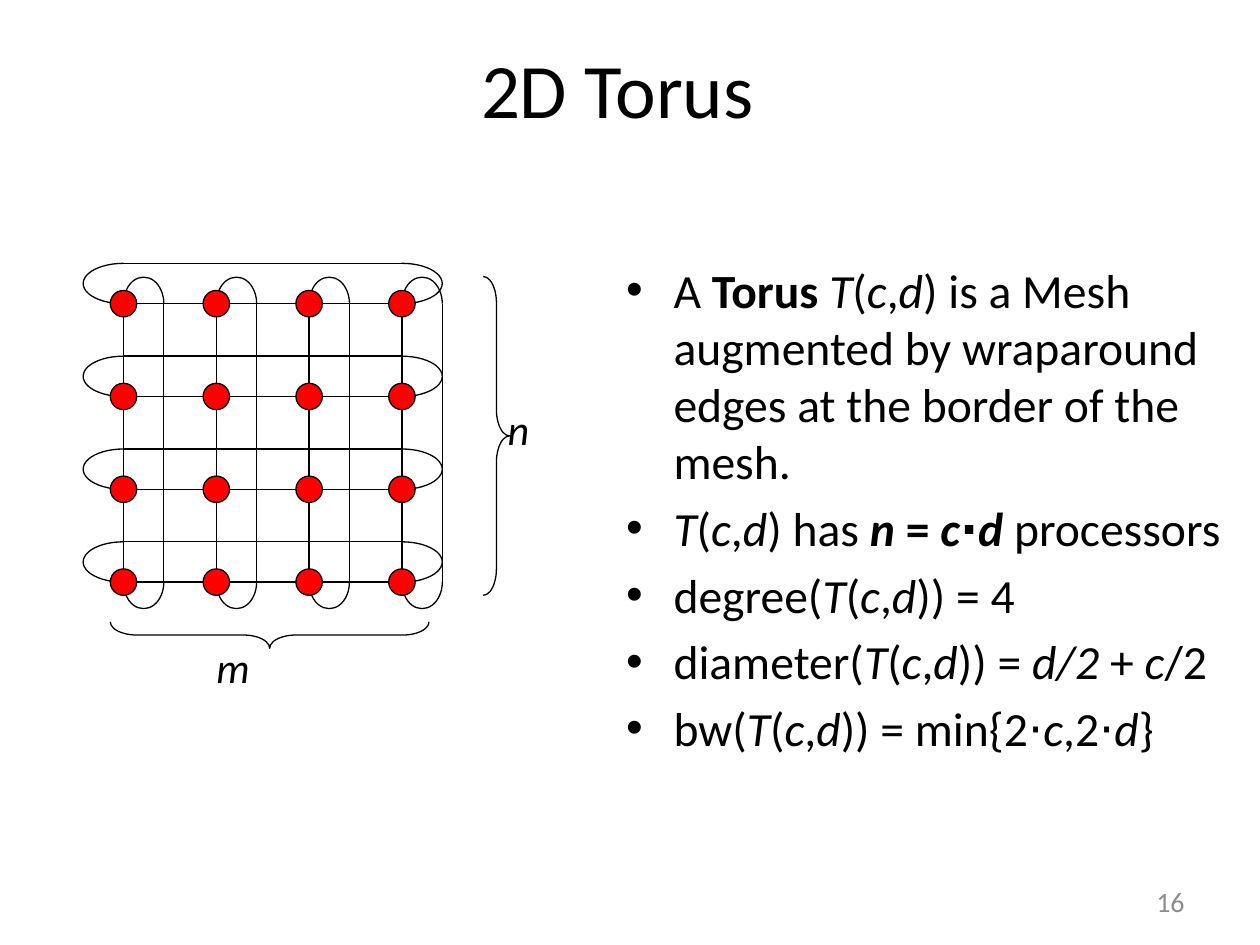
from dataclasses import dataclass

from lxml import etree
from pptx import Presentation
from pptx.dml.color import RGBColor
from pptx.enum.shapes import MSO_CONNECTOR, MSO_SHAPE
from pptx.enum.text import MSO_ANCHOR, MSO_AUTO_SIZE, PP_ALIGN
from pptx.oxml.ns import qn
from pptx.util import Inches, Pt

STRAIGHT = MSO_CONNECTOR.STRAIGHT
BRACKET, BRACE, OVAL = MSO_SHAPE.LEFT_BRACKET, MSO_SHAPE.RIGHT_BRACE, MSO_SHAPE.OVAL
MIDDLE, NO_FIT = MSO_ANCHOR.MIDDLE, MSO_AUTO_SIZE.NONE
LEFT, CENTER, RIGHT = PP_ALIGN.LEFT, PP_ALIGN.CENTER, PP_ALIGN.RIGHT


@dataclass(frozen=True)
class Theme:
    font: str = "Calibri"
    ink: RGBColor = RGBColor(0, 0, 0)
    node: RGBColor = RGBColor(0xFF, 0, 0)
    muted: RGBColor = RGBColor(0x8C, 0x8C, 0x8C)
    title: float = 44
    body: float = 27.2
    label: float = 24
    number: float = 16
    line: float = 0.75


THEME = Theme()

# Content: runs are (text, style), style "b" bold, "i" italic
TITLE = "2D Torus"
NUMBER = "16"
TORUS = [("T", "i"), ("(", ""), ("c", "i"), (",", ""), ("d", "i")]
BULLETS = [
    [("A ", ""), ("Torus ", "b"), *TORUS,
     (") is a Mesh augmented by wraparound edges at the border of the mesh.", "")],
    [*TORUS, (") has ", ""), ("n", "bi"), (" = ", "b"), ("c", "bi"), ("⋅", "b"),
     ("d", "bi"), (" processors", "")],
    [("degree(", ""), *TORUS, (")) = 4", "")],
    [("diameter(", ""), *TORUS, (")) = ", ""), ("d/2", "i"), (" + ", ""),
     ("c", "i"), ("/2", "")],
    [("bw(", ""), *TORUS, (")) = min{2⋅", ""), ("c", "i"), (",2⋅", ""),
     ("d", "i"), ("}", "")],
]
LABELS = [("n", 3.93, 3.15), ("m", 1.62, 5.04)]

# Torus grid, in inches
COUNT, SPAN = 4, 2.21
X0, Y0 = 0.98, 2.41
NODE, LOOP = 0.21, 0.32
XS = [X0 + i * SPAN / (COUNT - 1) for i in range(COUNT)]
YS = [Y0 + i * SPAN / (COUNT - 1) for i in range(COUNT)]
X1, Y1 = XS[-1], YS[-1]
BRACE_LENGTH = 2.53


def place(sp, left, top, width, height):
    sp.left, sp.top = Inches(left), Inches(top)
    sp.width, sp.height = Inches(width), Inches(height)


def style_run(r, size, color=THEME.ink, style=""):
    r.font.name, r.font.size = THEME.font, Pt(size)
    r.font.color.rgb = color
    r.font.bold, r.font.italic = "b" in style, "i" in style


def add_text(shapes, text, box, size, color=THEME.ink, style="", align=LEFT):
    sp = shapes.add_textbox(*map(Inches, box))
    tf = sp.text_frame
    tf.word_wrap = True
    tf.text = text
    p = tf.paragraphs[0]
    p.alignment = align
    style_run(p.runs[0], size, color, style)
    return tf


def add_line(shapes, x1, y1, x2, y2):
    line = shapes.add_connector(STRAIGHT, *map(Inches, (x1, y1, x2, y2)))
    line.line.color.rgb, line.line.width = THEME.ink, Pt(THEME.line)
    etree.SubElement(line._element.spPr, qn("a:effectLst"))


def add_outline(shapes, kind, cx, cy, width, height, rotation=0, adjust=(), fill=None):
    """Add a preset shape centred on (cx, cy)."""
    box = (cx - width / 2, cy - height / 2, width, height)
    sp = shapes.add_shape(kind, *map(Inches, box))
    sp.shadow.inherit = False
    sp.rotation = rotation
    for i, value in enumerate(adjust):
        sp.adjustments[i] = value
    if fill is None:
        sp.fill.background()
    else:
        sp.fill.solid()
        sp.fill.fore_color.rgb = fill
    sp.line.color.rgb, sp.line.width = THEME.ink, Pt(THEME.line)


def draw_torus(shapes):
    # Rows with their wraparound edges
    for y in YS:
        add_line(shapes, X0, y, X1, y)
        add_line(shapes, X0, y - LOOP, X1, y - LOOP)
        for cx, turn in ((X0 - LOOP / 2, 0), (X1 + LOOP / 2, 180)):
            add_outline(shapes, BRACKET, cx, y - LOOP / 2, LOOP, LOOP, turn, (0.5,))
    # Columns with their wraparound edges
    for x in XS:
        add_line(shapes, x, Y0, x, Y1)
        add_line(shapes, x + LOOP, Y0, x + LOOP, Y1)
        for cy, turn in ((Y0 - NODE / 2, 90), (Y1 + NODE / 2, 270)):
            add_outline(shapes, BRACKET, x + LOOP / 2, cy, NODE, LOOP, turn, (0.75,))
    # Processors
    for y in YS:
        for x in XS:
            add_outline(shapes, OVAL, x, y, NODE, NODE, fill=THEME.node)
    # Side braces and their labels
    for cx, cy, turn in ((3.94, 3.46, 0), (2.14, 5.04, 90)):
        add_outline(shapes, BRACE, cx, cy, NODE, BRACE_LENGTH, turn, (1, 0.5))
    for text, left, top in LABELS:
        add_text(shapes, text, (left, top, 0.83, 0.63), THEME.label, style="i")


def main():
    prs = Presentation()
    prs.slide_width, prs.slide_height = Inches(10), Inches(7.5)
    s = prs.slides.add_slide(prs.slide_layouts[1])

    # Title
    title = s.shapes.title
    place(title, 0.39, 0, 9.02, 1.39)
    tf = title.text_frame
    tf.text = TITLE
    tf.vertical_anchor = MIDDLE
    tf.paragraphs[0].alignment = CENTER
    style_run(tf.paragraphs[0].runs[0], THEME.title)

    # Bullets
    body = s.placeholders[1]
    place(body, 4.87, 2.02, 4.93, 3.78)
    tf = body.text_frame
    tf.auto_size = NO_FIT
    for i, runs in enumerate(BULLETS):
        p = tf.add_paragraph() if i else tf.paragraphs[0]
        for text, style in runs:
            r = p.add_run()
            r.text = text
            style_run(r, THEME.body, style=style)

    # Diagram
    draw_torus(s.shapes.add_group_shape().shapes)

    # Slide number
    tf = add_text(s.shapes, NUMBER, (7.17, 6.95, 2.33, 0.4), THEME.number,
                  THEME.muted, align=RIGHT)
    tf.vertical_anchor = MIDDLE

    prs.save("out.pptx")


if __name__ == "__main__":
    main()
